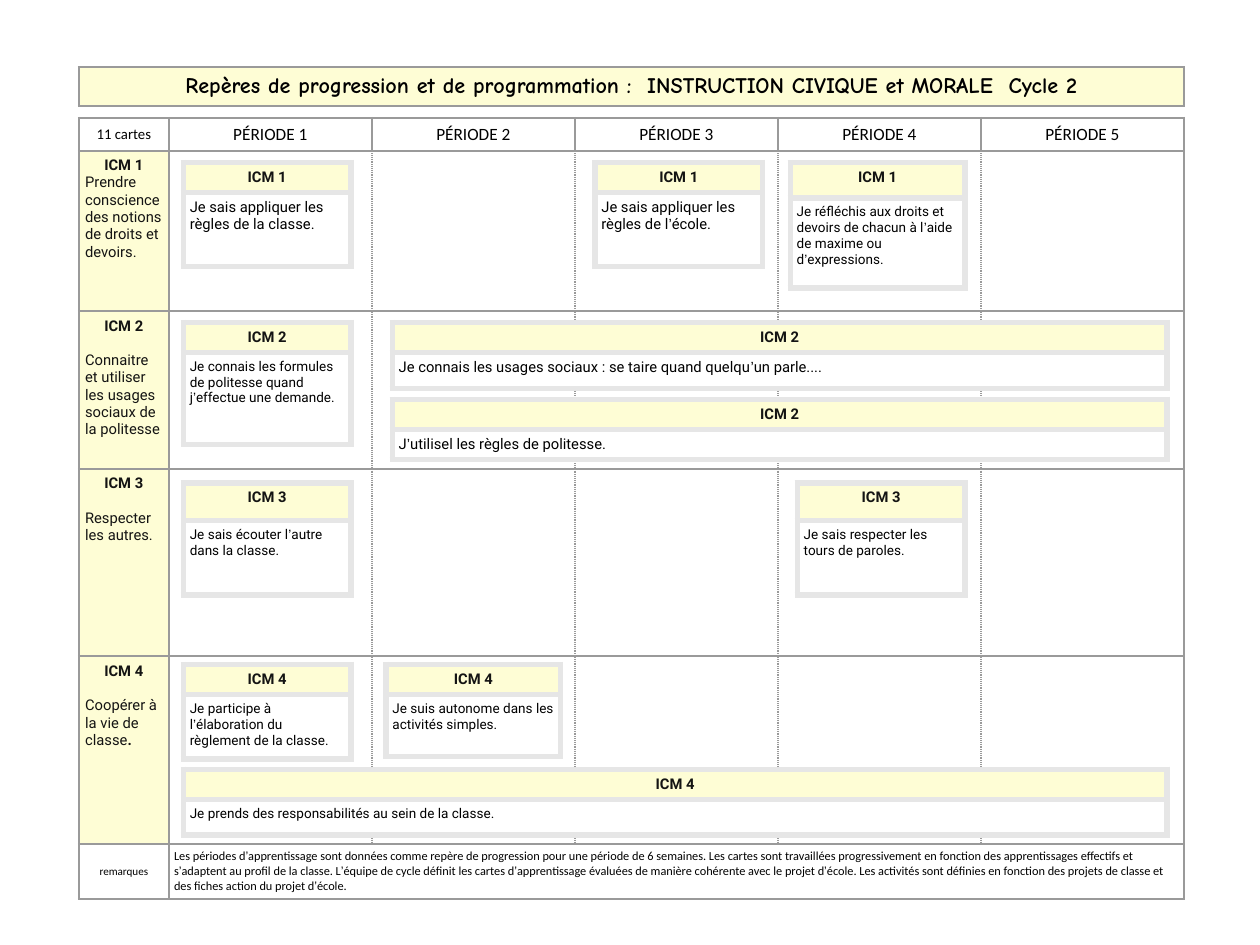
from lxml import etree
from pptx import Presentation
from pptx.dml.color import RGBColor
from pptx.enum import text as tx
from pptx.oxml import ns
from pptx.util import Cm, Pt

GREY = RGBColor(0x9A, 0x9A, 0x9A)
PALE = RGBColor(0xE6, 0xE6, 0xE6)
CREAM = RGBColor(0xFE, 0xFD, 0xD5)
WHITE = RGBColor(0xFF, 0xFF, 0xFF)
BLACK = RGBColor(0, 0, 0)
INK = RGBColor(0x14, 0x14, 0x13)

LEFT, WIDTH = 2.26, 31.68
SIDE, PERIOD = 2.58, 5.82
ROWS = [0.94, 4.6, 4.53, 5.37, 5.38, 1.55]
TITLE = ("Repères de progression et de programmation :  "
         "INSTRUCTION CIVIQUE et MORALE  Cycle 2")
THEMES = [
    ("ICM 1", "Prendre conscience des notions de droits et devoirs.", 0),
    ("ICM 2", "Connaitre et utiliser les usages sociaux de la politesse", 14),
    ("ICM 3", "Respecter les autres.", 14),
    ("ICM 4", "Coopérer à la vie de classe", 14),
]
NOTE = ("Les périodes d’apprentissage sont données comme repère de progression "
        "pour une période de 6 semaines. Les cartes sont travaillées "
        "progressivement en fonction des apprentissages effectifs et s’adaptent "
        "au profil de la classe. L’équipe de cycle définit les cartes "
        "d’apprentissage évaluées de manière cohérente avec le projet d’école. "
        "Les activités sont définies en fonction des projets de classe et des "
        "fiches action du projet d’école.")

# left, top, width, head height, body height (cm), head, text, text size
CARDS = [
    (5.26, 4.66, 4.8, 0.86, 2.13, "ICM 1",
     "Je sais appliquer les règles de la classe.", 12),
    (17.06, 4.66, 4.8, 0.86, 2.13, "ICM 1",
     "Je sais appliquer les règles de l’école.", 12),
    (22.66, 4.66, 5, 1.02, 2.58, "ICM 1",
     "Je réfléchis aux droits et devoirs de chacun à l’aide de maxime ou "
     "d’expressions.", 11),
    (5.26, 9.25, 4.8, 0.86, 2.64, "ICM 2",
     "Je connais les formules de politesse quand j’effectue une demande.", 11),
    (11.25, 9.25, 22.2, 0.86, 1.03, "ICM 2",
     "Je connais les usages sociaux : se taire quand quelqu’un parle....", 12),
    (5.26, 13.85, 4.8, 1.08, 2.13, "ICM 3",
     "Je sais écouter l’autre dans la classe.", 11),
    (22.86, 13.85, 4.8, 1.08, 2.13, "ICM 3",
     "Je sais respecter les tours de paroles.", 11),
    (5.26, 19.06, 4.8, 0.86, 1.85, "ICM 4",
     "Je participe à l’élaboration du règlement de la classe.", 11),
    (5.26, 22.06, 28.19, 0.86, 1.02, "ICM 4",
     "Je prends des responsabilités au sein de la classe.", 11),
    (11.07, 19.06, 5, 0.86, 1.78, "ICM 4",
     "Je suis autonome dans les activités simples.", 11),
    (11.25, 11.46, 22.2, 0.86, 0.86, "ICM 2",
     "J’utilisel les règles de politesse.", 12),
]


def write(par, words, size=12, font="Roboto", color=BLACK, bold=False,
          center=False, after=0):
    """Add words to a paragraph, with each apostrophe in Arial."""
    par.alignment = tx.PP_ALIGN.CENTER if center else tx.PP_ALIGN.LEFT
    par.space_after = Pt(after)
    for i, part in enumerate(words.split("’")):
        for piece, face in (("’" if i else "", "Arial"), (part, font)):
            if piece:
                run = par.add_run()
                run.text = piece
                run.font.size, run.font.name = Pt(size), face
                run.font.bold = bold
                run.font.color.rgb = color


def edge(cell, color, width, dots=""):
    """Draw the four borders; the sides named in dots are dotted."""
    props = cell._tc.get_or_add_tcPr()
    for i, side in enumerate("LRTB"):
        line = etree.Element(ns.qn("a:ln" + side), w=str(Pt(width)))
        fill = etree.SubElement(line, ns.qn("a:solidFill"))
        etree.SubElement(fill, ns.qn("a:srgbClr"), val=str(color))
        dash = "sysDot" if side in dots else "solid"
        etree.SubElement(line, ns.qn("a:prstDash"), val=dash)
        props.insert(i, line)


def style(cell, fill=None, line=GREY, width=2, dots="", inset=0.18,
          middle=False):
    """Format a cell and return its first paragraph."""
    if fill is None:
        cell.fill.background()
    else:
        cell.fill.solid()
        cell.fill.fore_color.rgb = fill
    edge(cell, line, width, dots)
    cell.margin_left = cell.margin_right = Cm(inset)
    cell.margin_top = cell.margin_bottom = Cm(inset)
    if middle:
        cell.vertical_anchor = tx.MSO_ANCHOR.MIDDLE
    return cell.text_frame.paragraphs[0]


def grid(slide, left, top, cols, rows):
    table = slide.shapes.add_table(len(rows), len(cols), Cm(left), Cm(top),
                                   Cm(sum(cols)), Cm(sum(rows))).table
    table.first_row = table.horz_banding = False
    for col, width in zip(table.columns, cols):
        col.width = Cm(width)
    for row, height in zip(table.rows, rows):
        row.height = Cm(height)
    return table


def banner(slide):
    table = grid(slide, LEFT, 1.93, [WIDTH], [1.12])
    write(style(table.cell(0, 0), CREAM), TITLE, size=18, font="Comic Neue",
          bold=True, center=True)


def planner(slide):
    table = grid(slide, LEFT, 3.38, [SIDE] + [PERIOD] * 5, ROWS)
    last = len(ROWS) - 1

    # Header row
    for col in range(6):
        par = style(table.cell(0, col), inset=0.15, middle=True)
        write(par, f"PÉRIODE {col}" if col else "11 cartes",
              size=14 if col else 12, font="Calibri", center=True)

    # Theme rows, with dotted lines between periods
    for row, (code, goal, gap) in enumerate(THEMES, 1):
        cell = table.cell(row, 0)
        write(style(cell, CREAM), code, color=INK, bold=True, center=True,
              after=gap)
        par = cell.text_frame.add_paragraph()
        write(par, goal, color=INK)
        if code == "ICM 4":
            write(par, ".", color=INK, bold=True)
        for col in range(1, 6):
            dots = {1: "R", 5: "L"}.get(col, "LR")
            style(table.cell(row, col), dots=dots)

    # Remarks row
    table.cell(last, 1).merge(table.cell(last, 5))
    pars = [style(table.cell(last, col), inset=0.15, middle=True)
            for col in range(6)]
    write(pars[0], "remarques", size=9, font="Calibri", center=True)
    write(pars[1], NOTE, size=10, font="Calibri")


def card(slide, left, top, width, head, body, code, goal, size):
    table = grid(slide, left, top, [width], [head, body])
    write(style(table.cell(0, 0), CREAM, PALE, 5), code, color=INK, bold=True,
          center=True)
    write(style(table.cell(1, 0), WHITE, PALE, 5), goal, size=size)


def main():
    deck = Presentation()
    deck.slide_width, deck.slide_height = Cm(36.12), Cm(27.1)
    slide = deck.slides.add_slide(deck.slide_layouts[6])
    planner(slide)
    banner(slide)
    for item in CARDS:
        card(slide, *item)
    deck.save("out.pptx")


if __name__ == "__main__":
    main()
